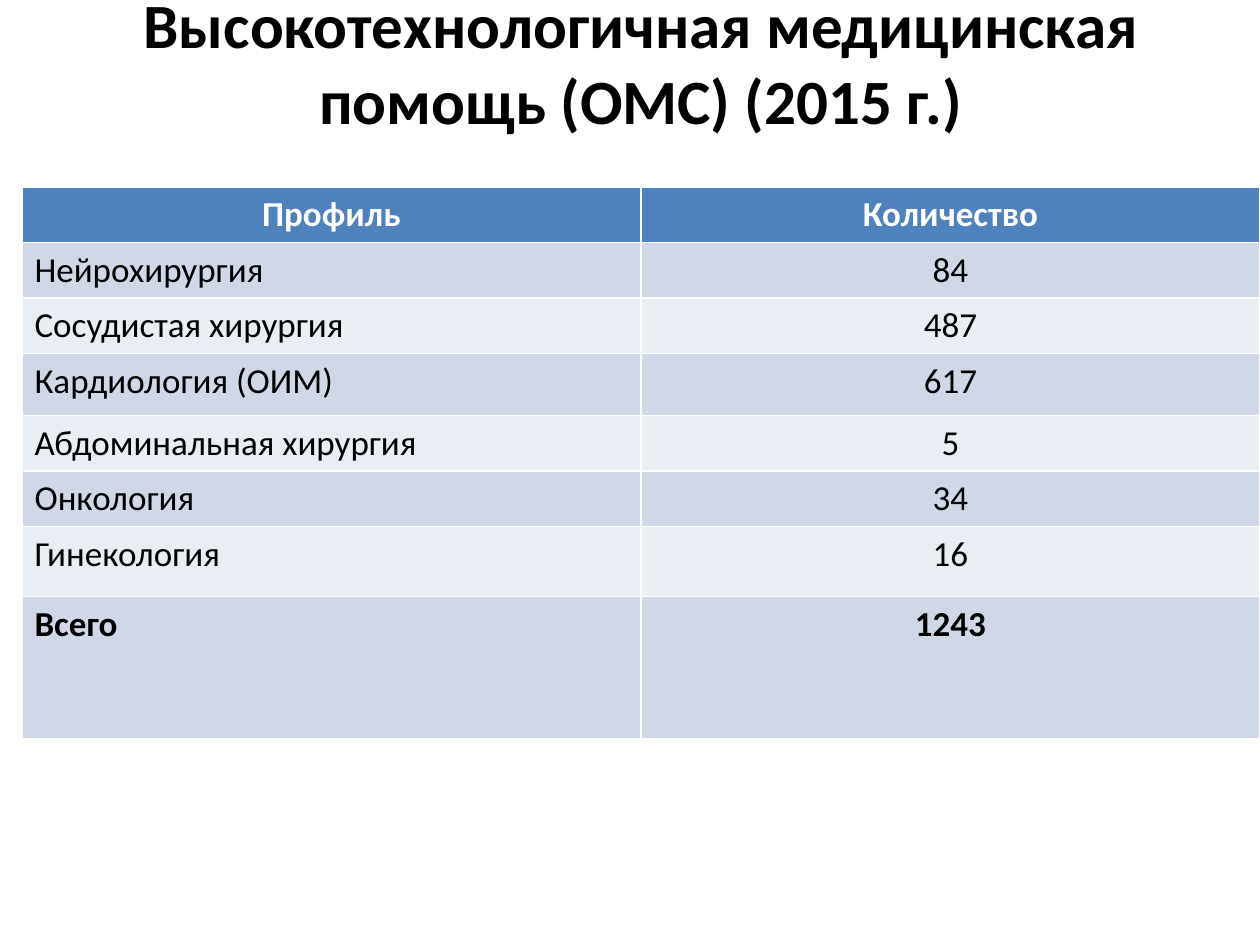
from pptx import Presentation
from pptx.dml.color import RGBColor
from pptx.enum.text import MSO_ANCHOR as Anchor, MSO_AUTO_SIZE as AutoSize, PP_ALIGN as Align
from pptx.util import Emu, Pt

PX = 914400 // 126
COLORS = {
    "text": "000000",
    "header_text": "FFFFFF",
    "header": "4F81BD",
    "band_dark": "D0D8E8",
    "band_light": "E9EDF4",
}
ROWS = [
    ("Профиль", "Количество"),
    ("Нейрохирургия", "84"),
    ("Сосудистая хирургия", "487"),
    ("Кардиология (ОИМ)", "617"),
    ("Абдоминальная хирургия", "5"),
    ("Онкология", "34"),
    ("Гинекология", "16"),
    ("Всего", "1243"),
]
ROW_HEIGHTS = [50, 50, 50, 62, 53, 55, 70, 142]
LEFT, WIDTH = 22, 1238


def px(*values):
    return [Emu(v * PX) for v in values]


def rgb(name):
    return RGBColor.from_string(COLORS[name])


def write(tf, text, size=20, color="text", bold=False, align=Align.LEFT):
    p = tf.paragraphs[0]
    p.alignment = align
    r = p.add_run()
    r.text = text
    r.font.name = "Calibri"
    r.font.size = Pt(size)
    r.font.bold = bold
    r.font.color.rgb = rgb(color)


def add_title(s, text):
    sp = s.shapes.title
    sp.left, sp.top, sp.width, sp.height = px(LEFT, 38, WIDTH, 47)
    tf = sp.text_frame
    tf.auto_size = AutoSize.NONE
    tf.word_wrap = True
    tf.vertical_anchor = Anchor.MIDDLE
    write(tf, text, size=36, bold=True, align=Align.CENTER)


def add_profile_table(s):
    """Header row, banded rows and a bold total; the table style draws the white borders."""
    frame = s.shapes.add_table(len(ROWS), 2, *px(LEFT, 187, WIDTH, sum(ROW_HEIGHTS)))
    table = frame.table
    for i, (values, height) in enumerate(zip(ROWS, ROW_HEIGHTS)):
        table.rows[i].height = px(height)[0]
        header, total = i == 0, i == len(ROWS) - 1
        fill = "header" if header else "band_dark" if i % 2 else "band_light"
        for j, value in enumerate(values):
            cell = table.cell(i, j)
            cell.fill.solid()
            cell.fill.fore_color.rgb = rgb(fill)
            write(cell.text_frame, value,
                  color="header_text" if header else "text",
                  bold=header or total,
                  align=Align.CENTER if header or j else Align.LEFT)


def main():
    prs = Presentation()
    prs.slide_width, prs.slide_height = px(1260, 945)
    s = prs.slides.add_slide(prs.slide_layouts[5])
    add_title(s, "Высокотехнологичная медицинская помощь (ОМС) (2015 г.)")
    add_profile_table(s)
    prs.save("out.pptx")


if __name__ == "__main__":
    main()
